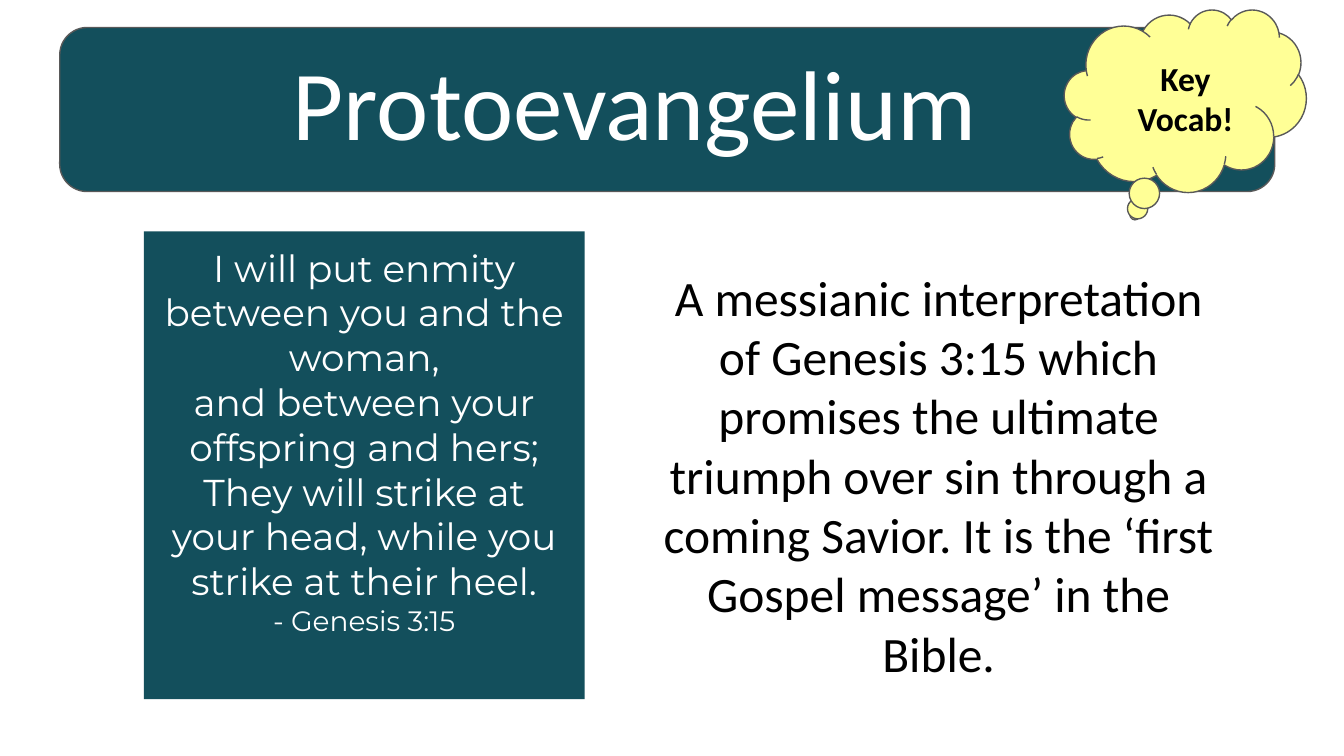
"""Build a vocabulary slide that defines Protoevangelium."""
import pptx
import pptx.dml.color
import pptx.enum.shapes
import pptx.enum.text
import pptx.util

TEAL = pptx.dml.color.RGBColor(0x13, 0x4F, 0x5C)
YELLOW = pptx.dml.color.RGBColor(0xFF, 0xFF, 0x96)
GRAY = pptx.dml.color.RGBColor(0x59, 0x59, 0x59)
WHITE = pptx.dml.color.RGBColor(0xFF, 0xFF, 0xFF)
BLACK = pptx.dml.color.RGBColor(0, 0, 0)
SHAPES = pptx.enum.shapes.MSO_SHAPE
ALIGN = pptx.enum.text.PP_ALIGN

presentation = pptx.Presentation()
presentation.slide_width = pptx.util.Inches(10)
presentation.slide_height = presentation.slide_width * 9 // 16
slide = presentation.slides.add_slide(presentation.slide_layouts[6])
COLUMN = presentation.slide_width / 100
ROW = presentation.slide_height / 100


def add_panel(kind, left, top, width, height, fill, outlined):
    shape = slide.shapes.add_shape(
        kind, int(left * COLUMN), int(top * ROW), int(width * COLUMN), int(height * ROW))
    shape.shadow.inherit = False
    shape.fill.solid()
    shape.fill.fore_color.rgb = fill
    if outlined:
        shape.line.color.rgb = GRAY
        shape.line.width = pptx.util.Pt(0.75)
    else:
        shape.line.fill.background()
    return shape


def write(shape, lines, sizes, font, color, align=ALIGN.CENTER, bold=False):
    frame = shape.text_frame
    frame.word_wrap = True
    frame.vertical_anchor = pptx.enum.text.MSO_ANCHOR.TOP
    frame.margin_left = frame.margin_right = pptx.util.Inches(0.1)
    frame.margin_top = frame.margin_bottom = pptx.util.Inches(0.1)
    frame.text = "\n".join(lines)
    for paragraph, size in zip(frame.paragraphs, sizes):
        paragraph.alignment = align
        for run in paragraph.runs:
            run.font.size = pptx.util.Pt(size)
            run.font.name = font
            run.font.bold = bold
            run.font.color.rgb = color


definition = slide.shapes.add_textbox(
    int(47.95 * COLUMN), int(33.5 * ROW), int(43.8 * COLUMN), int(60.6 * ROW))
write(definition, [
    "A messianic interpretation of Genesis 3:15 which promises the ultimate triumph "
    "over sin through a coming Savior. It is the ‘first Gospel message’ in the Bible."],
    [26.5], "Calibri", BLACK)

add_panel(SHAPES.ROUNDED_RECTANGLE, 4.45, 3.65, 90.4, 21.7, TEAL, True)
title = slide.shapes.add_textbox(
    int(9.1 * COLUMN), int(3.7 * ROW), int(82.6 * COLUMN), int(20.6 * ROW))
write(title, ["Protoevangelium"], [53], "Calibri", WHITE, ALIGN.LEFT)
title.text_frame.margin_left = int(12.7 * COLUMN)

verse = add_panel(SHAPES.RECTANGLE, 10.7, 30.6, 32.8, 61.9, TEAL, False)
write(verse, [
    "I will put enmity between you and the woman,",
    "and between your offspring and hers;",
    "They will strike at your head, while you strike at their heel.",
    "- Genesis 3:15"], [20, 20, 20, 15], "Montserrat", WHITE)

add_panel(SHAPES.CLOUD_CALLOUT, 79.2, 1.25, 18, 24.15, YELLOW, True)
label = slide.shapes.add_textbox(
    int(71.8 * COLUMN), int(5.9 * ROW), int(32.8 * COLUMN), int(14.4 * ROW))
write(label, ["Key", "Vocab!"], [18, 18], "Calibri", BLACK, bold=True)

presentation.save("out.pptx")
